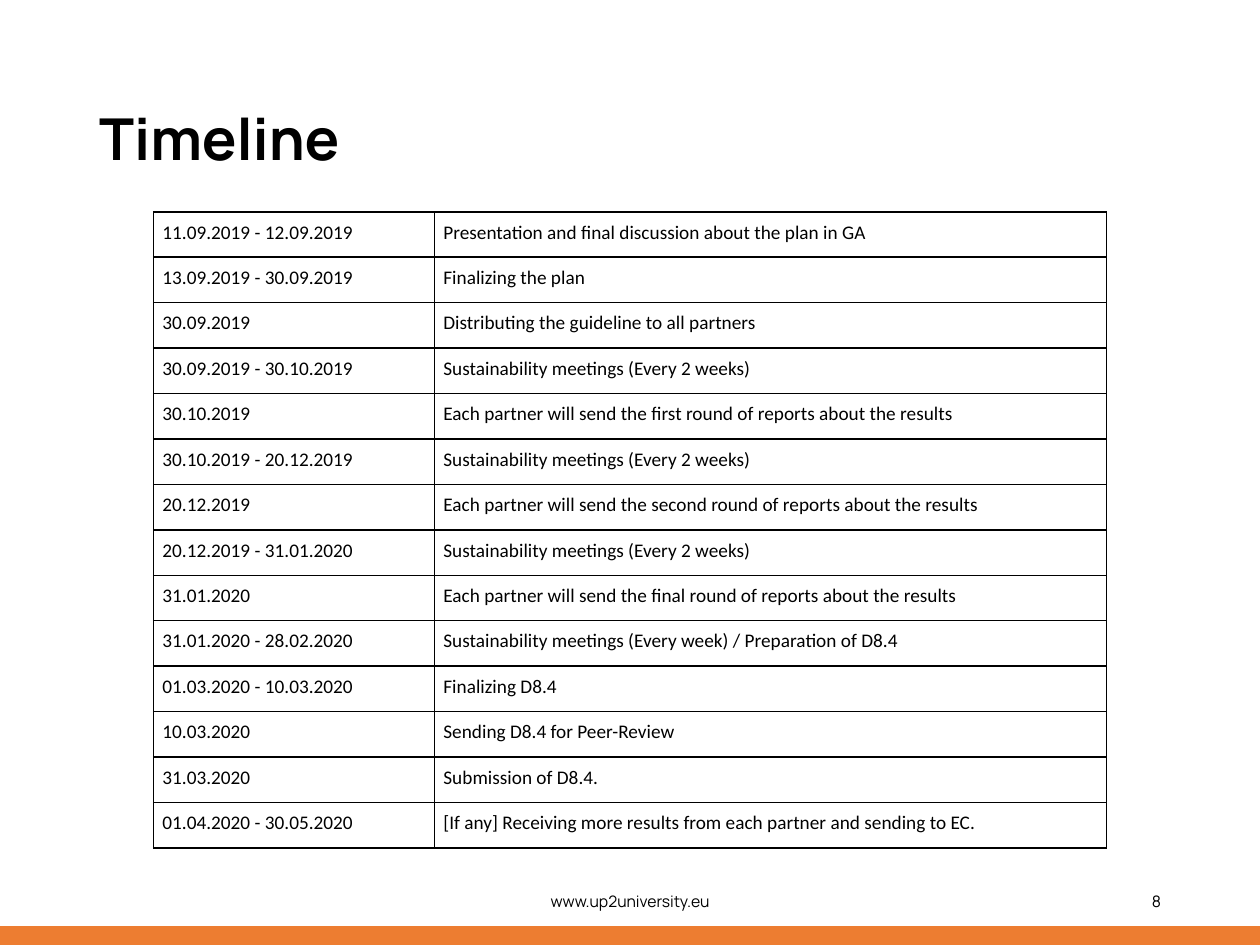
from pptx import Presentation
from pptx.dml.color import RGBColor
from pptx.enum.shapes import MSO_SHAPE as Shape
from pptx.enum.text import MSO_ANCHOR as Anchor, MSO_AUTO_SIZE as AutoSize, PP_ALIGN as Align
from pptx.oxml import parse_xml
from pptx.oxml.ns import nsdecls
from pptx.util import Pt

COLORS = {"text": "000000", "paper": "FFFFFF", "bar": "ED7D31"}
TITLE = "Timeline"
MEETINGS = "Sustainability meetings (Every 2 weeks)"
SCHEDULE = [
    ("11.09.2019 - 12.09.2019", "Presentation and final discussion about the plan in GA"),
    ("13.09.2019 - 30.09.2019", "Finalizing the plan"),
    ("30.09.2019", "Distributing the guideline to all partners"),
    ("30.09.2019 - 30.10.2019", MEETINGS),
    ("30.10.2019", "Each partner will send the first round of reports about the results"),
    ("30.10.2019 - 20.12.2019", MEETINGS),
    ("20.12.2019", "Each partner will send the second round of reports about the results"),
    ("20.12.2019 - 31.01.2020", MEETINGS),
    ("31.01.2020", "Each partner will send the final round of reports about the results"),
    ("31.01.2020 - 28.02.2020", "Sustainability meetings (Every week) / Preparation of D8.4"),
    ("01.03.2020 - 10.03.2020", "Finalizing D8.4"),
    ("10.03.2020", "Sending D8.4 for Peer-Review"),
    ("31.03.2020", "Submission of D8.4."),
    ("01.04.2020 - 30.05.2020", "[If any] Receiving more results from each partner and sending to EC."),
]
FOOTER = [
    ("www.up2university.eu", 238.5, 243, Align.CENTER),
    ("8", 508.5, 162, Align.RIGHT),
]
PAGE_WIDTH, PAGE_HEIGHT, BAR_HEIGHT = 720, 540, 10.8
TABLE_LEFT, TABLE_TOP, ROW_HEIGHT = 87.8, 121, 25.97
COLUMN_WIDTHS = [160.6, 383.8]
CELL_MARGIN = 5


def write(frame, text, *, size, font="Manrope", bold=False, align=Align.LEFT, spacing=1.0):
    para = frame.paragraphs[0]
    para.alignment = align
    para.line_spacing = spacing
    span = para.add_run()
    span.text = text
    span.font.name = font
    span.font.size = Pt(size)
    span.font.bold = bold
    span.font.color.rgb = RGBColor.from_string(COLORS["text"])


def add_borders(cell):
    properties = cell._tc.get_or_add_tcPr()
    for position, side in enumerate(("lnL", "lnR", "lnT", "lnB")):
        properties.insert(position, parse_xml(
            f'<a:{side} {nsdecls("a")} w="{Pt(1)}"><a:solidFill>'
            f'<a:srgbClr val="{COLORS["text"]}"/></a:solidFill></a:{side}>'))


def add_schedule(page):
    table = page.shapes.add_table(
        len(SCHEDULE), len(COLUMN_WIDTHS), Pt(TABLE_LEFT), Pt(TABLE_TOP),
        Pt(sum(COLUMN_WIDTHS)), Pt(ROW_HEIGHT * len(SCHEDULE))).table
    table.first_row = table.horz_banding = False
    for column, width in zip(table.columns, COLUMN_WIDTHS):
        column.width = Pt(width)
    for row, entry in zip(table.rows, SCHEDULE):
        row.height = Pt(ROW_HEIGHT)
        for cell, text in zip(row.cells, entry):
            cell.margin_left = cell.margin_right = Pt(CELL_MARGIN)
            cell.margin_top = cell.margin_bottom = Pt(CELL_MARGIN)
            cell.fill.background()
            add_borders(cell)
            write(cell.text_frame, text, size=11, font="Calibri")


def main():
    deck = Presentation()
    deck.slide_width, deck.slide_height = Pt(PAGE_WIDTH), Pt(PAGE_HEIGHT)
    page = deck.slides.add_slide(deck.slide_layouts[5])
    page.background.fill.solid()
    page.background.fill.fore_color.rgb = RGBColor.from_string(COLORS["paper"])

    bar = page.shapes.add_shape(
        Shape.RECTANGLE, 0, Pt(PAGE_HEIGHT - BAR_HEIGHT), Pt(PAGE_WIDTH), Pt(BAR_HEIGHT))
    bar.shadow.inherit = False
    bar.fill.solid()
    bar.fill.fore_color.rgb = RGBColor.from_string(COLORS["bar"])
    bar.line.fill.background()

    title = page.shapes.title
    title.left, title.top, title.width, title.height = Pt(49.5), Pt(28.8), Pt(544.4), Pt(104.4)
    title.text_frame.auto_size = AutoSize.NONE
    title.text_frame.vertical_anchor = Anchor.MIDDLE
    write(title.text_frame, TITLE, size=33, bold=True, spacing=0.9)

    for text, left, width, align in FOOTER:
        box = page.shapes.add_textbox(Pt(left), Pt(500.5), Pt(width), Pt(28.75))
        box.text_frame.word_wrap = True
        box.text_frame.vertical_anchor = Anchor.MIDDLE
        write(box.text_frame, text, size=9, align=align)

    add_schedule(page)
    deck.save("out.pptx")


if __name__ == "__main__":
    main()
